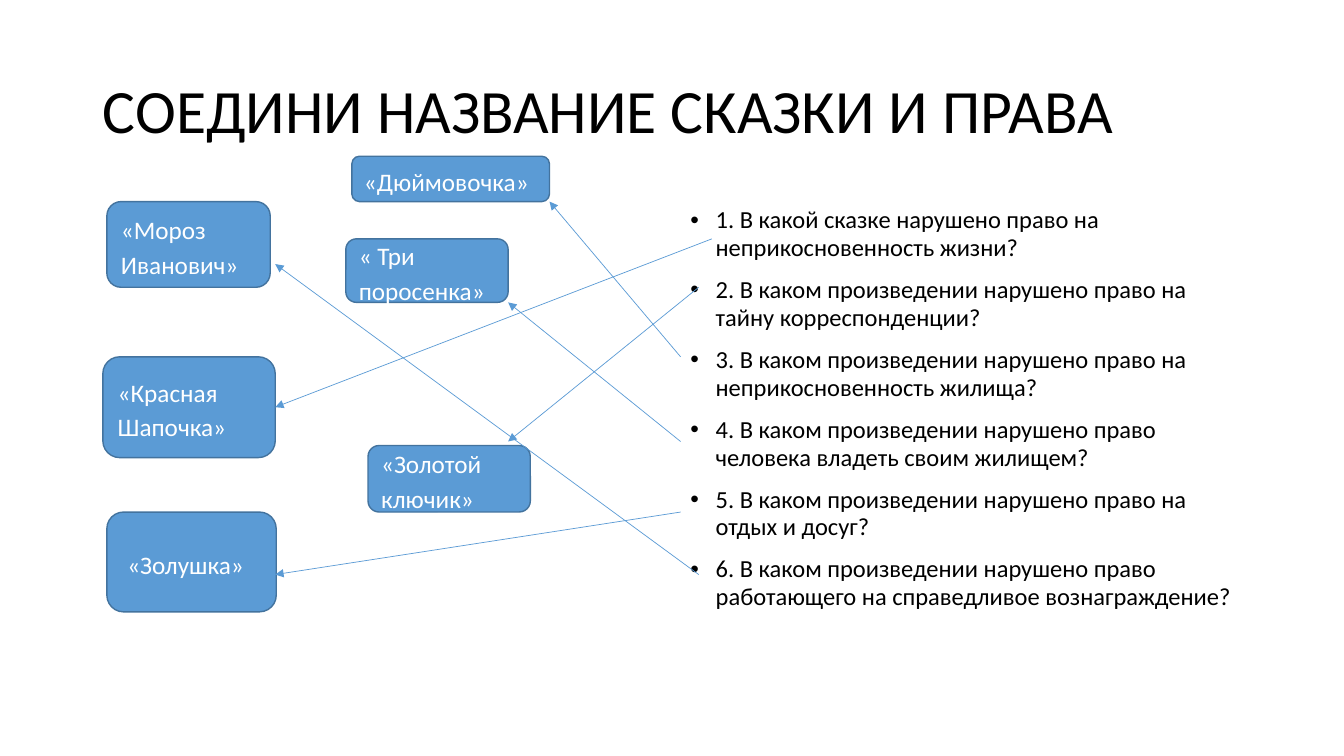
"""Build a slide that matches fairy tales to the rights broken in them."""
from lxml import etree
from pptx import Presentation
from pptx.dml.color import RGBColor
from pptx.enum.shapes import MSO_CONNECTOR, MSO_SHAPE
from pptx.enum.text import MSO_ANCHOR, PP_ALIGN
from pptx.oxml.ns import qn
from pptx.util import Inches, Pt

LINE = MSO_CONNECTOR.STRAIGHT
ROUND = MSO_SHAPE.ROUNDED_RECTANGLE
MIDDLE, TOP = MSO_ANCHOR.MIDDLE, MSO_ANCHOR.TOP
LEFT = PP_ALIGN.LEFT
BLACK = RGBColor(0x00, 0x00, 0x00)
WHITE = RGBColor(0xFF, 0xFF, 0xFF)
BLUE = RGBColor(0x5B, 0x9B, 0xD5)
NAVY = RGBColor(0x43, 0x73, 0x9E)
WIDE, HIGH = 13.33, 7.5

TITLE = "СОЕДИНИ НАЗВАНИЕ СКАЗКИ И ПРАВА"
ASKS = [
    "1. В какой сказке нарушено право на неприкосновенность жизни?",
    "2. В каком произведении нарушено право на тайну корреспонденции?",
    "3. В каком произведении нарушено право на неприкосновенность жилища?",
    "4. В каком произведении нарушено право человека владеть своим жилищем?",
    "5. В каком произведении нарушено право на отдых и досуг?",
    "6. В каком произведении нарушено право работающего на справедливое вознаграждение?",
]
NEAR, EDGE, INNER = 2.73, 6.75, 6.93
ROWS = [2, 2.37, 2.85, 3.54, 4.38, 5.08, 5.7]
TALES = [
    ("«Дюймовочка»", (3.49, 1.55, 1.96, 0.45), (EDGE, ROWS[3]), (5.45, ROWS[0])),
    ("« Три поросенка»", (3.43, ROWS[1], 1.61, 0.63), (EDGE, ROWS[4]), (5.04, 3)),
    ("«Золотой ключик»", (3.65, 4.42, 1.61, 0.66), (INNER, ROWS[2]), (5.04, ROWS[4])),
    (" «Золушка»", (1.06, ROWS[5], 1.68, 0.99), (EDGE, ROWS[5]), (NEAR, ROWS[6])),
    ("«Красная Шапочка»", (1.02, ROWS[3], 1.71, 1), (7.06, ROWS[1]), (NEAR, 4.04)),
    ("«Мороз Иванович»", (1.06, ROWS[0], 1.62, 0.85), (INNER, ROWS[6]), (NEAR, 2.62)),
]
HEAD = {"size": Pt(44), "name": "Calibri", "color": BLACK}
BODY = {"size": Pt(17.5), "name": "Calibri", "color": BLACK}
LABEL = {"size": Pt(18), "name": "Calibri", "color": WHITE}


def write(shape, lines, style, space, anchor, gap=0):
    frame = shape.text_frame
    frame.word_wrap = True
    frame.vertical_anchor = anchor
    frame.text = "\n".join(lines)
    for para in frame.paragraphs:
        para.alignment = LEFT
        para.line_spacing = space
        para.space_before = Pt(gap)
        for key, value in style.items():
            if key == "color":
                para.font.color.rgb = value
            else:
                setattr(para.font, key, value)


def bullet(para):
    props = para._p.get_or_add_pPr()
    props.set("marL", str(Inches(0.25)))
    props.set("indent", str(-Inches(0.25)))
    mark = {"buFont": ("typeface", "Arial"), "buChar": ("char", "•")}
    spot = props.find(qn("a:defRPr"))
    for tag, (key, value) in mark.items():
        node = etree.Element(qn("a:" + tag))
        node.set(key, value)
        if spot is None:
            props.append(node)
        else:
            spot.addprevious(node)


def arrow(shapes, start, end):
    link = shapes.add_connector(LINE, *map(Inches, start + end))
    link.line.color.rgb = BLUE
    link.line.width = Pt(0.5)
    tip = etree.SubElement(link.line._get_or_add_ln(), qn("a:tailEnd"))
    tip.set("type", "triangle")
    etree.SubElement(link._element.spPr, qn("a:effectLst"))


def main():
    deck = Presentation()
    deck.slide_width, deck.slide_height = Inches(WIDE), Inches(HIGH)
    shapes = deck.slides.add_slide(deck.slide_layouts[5]).shapes

    title = shapes.title
    place = {"left": 0.92, "top": 0.4, "width": 11.5, "height": 1.45}
    for key, value in place.items():
        setattr(title, key, Inches(value))
    write(title, [TITLE], HEAD, 0.9, MIDDLE)

    body = shapes.add_textbox(*map(Inches, (EDGE, ROWS[0], 5.67, 4.76)))
    write(body, ASKS, BODY, 0.95, TOP, 10)
    for para in body.text_frame.paragraphs:
        bullet(para)

    for name, box, start, end in TALES:
        card = shapes.add_shape(ROUND, *map(Inches, box))
        card.shadow.inherit = False
        card.fill.solid()
        card.fill.fore_color.rgb = BLUE
        card.line.color.rgb = NAVY
        card.line.width = Pt(1)
        write(card, [name], LABEL, 1.15, MIDDLE)
    for name, box, start, end in TALES:
        arrow(shapes, start, end)

    deck.save("out.pptx")


if __name__ == "__main__":
    main()
